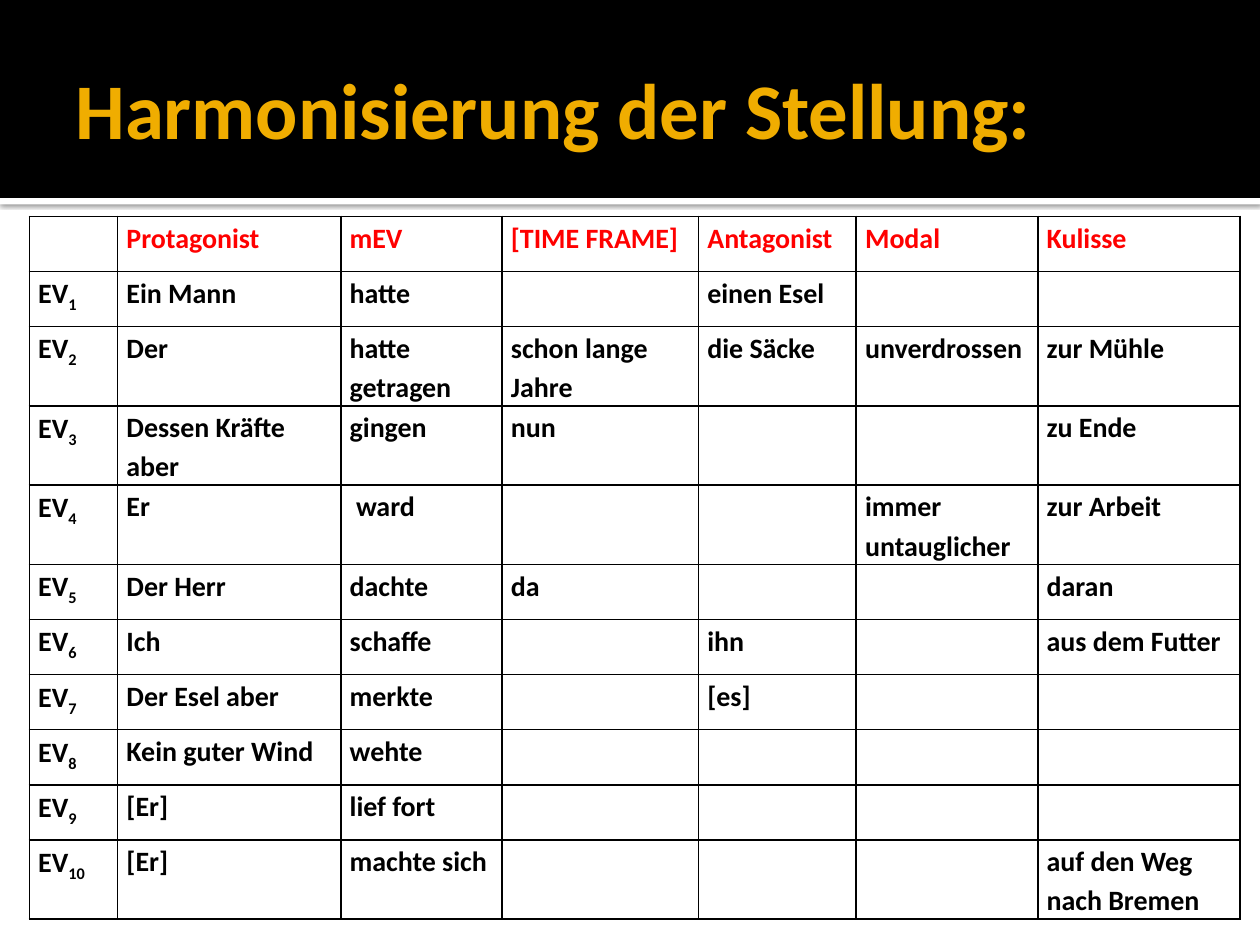
from dataclasses import dataclass

from lxml.etree import SubElement
from pptx import Presentation
from pptx.dml.color import RGBColor
from pptx.enum.shapes import MSO_SHAPE
from pptx.enum.text import MSO_ANCHOR, PP_ALIGN
from pptx.oxml import parse_xml
from pptx.oxml.ns import nsdecls, qn
from pptx.util import Cm, Pt


@dataclass(frozen=True)
class Theme:
    """Colours, font and type sizes of the slide."""

    font: str = "Calibri"
    white: str = "FFFFFF"
    black: str = "000000"
    gold: str = "F0AD00"
    red: str = "FF0000"
    title_size: int = 45
    table_size: int = 16


THEME = Theme()
HEADERS = ("Protagonist", "mEV", "[TIME FRAME]", "Antagonist", "Modal", "Kulisse")
EVENTS = (
    ("Ein Mann", "hatte", "", "einen Esel", "", ""),
    ("Der", "hatte getragen", "schon lange Jahre", "die Säcke", "unverdrossen", "zur Mühle"),
    ("Dessen Kräfte aber", "gingen", "nun", "", "", "zu Ende"),
    ("Er", " ward", "", "", "immer untauglicher", "zur Arbeit"),
    ("Der Herr", "dachte", "da", "", "", "daran"),
    ("Ich", "schaffe", "", "ihn", "", "aus dem Futter"),
    ("Der Esel aber", "merkte", "", "[es]", "", ""),
    ("Kein guter Wind", "wehte", "", "", "", ""),
    ("[Er]", "lief fort", "", "", "", ""),
    ("[Er]", "machte sich", "", "", "", "auf den Weg nach Bremen"),
)
COLUMN_WIDTHS = (1.78, 4.5, 3.25, 3.96, 3.18, 3.66, 4.08)
TWO_LINE_ROWS = {2, 3, 4, 10}
ROW_HEIGHT, TWO_LINE_HEIGHT = 1.11, 1.6


def apply_format(target, values):
    """Set each named attribute on the target."""
    for name, value in values.items():
        setattr(target, name, value)


def add_run(paragraph, text, size, color):
    """Add a bold run in the theme font and return it."""
    run = paragraph.add_run()
    run.text = text
    apply_format(run.font, {"name": THEME.font, "size": Pt(size), "bold": True})
    run.font.color.rgb = RGBColor.from_string(color)
    return run


def add_bar(slide, top, height, color):
    """Add a plain bar across the full slide width."""
    bar = slide.shapes.add_shape(MSO_SHAPE.RECTANGLE, 0, Cm(top), Cm(25.4), Cm(height))
    bar.shadow.inherit = False
    bar.fill.solid()
    bar.fill.fore_color.rgb = RGBColor.from_string(color)
    bar.line.fill.background()
    return bar


def add_bottom_shadow(shape):
    """Give the shape a soft shadow that falls straight down."""
    effects = shape._element.spPr.find(qn("a:effectLst"))
    shadow = SubElement(effects, qn("a:outerShdw"), blurRad=str(Pt(2.5)),
                        dist=str(Pt(0.8)), dir="5400000", algn="tl", rotWithShape="0")
    color = SubElement(shadow, qn("a:srgbClr"), val=THEME.black)
    SubElement(color, qn("a:alpha"), val="60000")


def place_title(slide, text):
    """Move the title placeholder over the bars and format it."""
    title = slide.shapes.title
    slide.shapes._spTree.append(title._element)
    apply_format(title, {"left": Cm(1.27), "top": Cm(0.43),
                         "width": Cm(22.86), "height": Cm(3.48)})
    apply_format(title.text_frame, {
        "vertical_anchor": MSO_ANCHOR.MIDDLE, "word_wrap": True,
        "margin_left": Cm(0.25), "margin_right": Cm(0.13),
        "margin_top": Cm(0.13), "margin_bottom": Cm(0.13)})
    paragraph = title.text_frame.paragraphs[0]
    paragraph.alignment = PP_ALIGN.LEFT
    add_run(paragraph, text, THEME.title_size, THEME.gold)


def add_borders(cell):
    """Draw a thin black line on all four sides of the cell."""
    properties = cell._tc.get_or_add_tcPr()
    for index, side in enumerate(("lnL", "lnR", "lnT", "lnB")):
        properties.insert(index, parse_xml(
            f'<a:{side} {nsdecls("a")} w="{Pt(1)}"><a:solidFill>'
            f'<a:srgbClr val="{THEME.black}"/></a:solidFill></a:{side}>'))


def fill_cell(cell, text, color, subscript=""):
    """Format a cell and write its text with an optional subscript."""
    apply_format(cell, {"margin_left": Cm(0.18), "margin_right": Cm(0.18),
                        "margin_top": 0, "margin_bottom": 0})
    cell.fill.background()
    add_borders(cell)
    paragraph = cell.text_frame.paragraphs[0]
    paragraph.line_spacing = 1.15
    if text:
        add_run(paragraph, text, THEME.table_size, color)
    if subscript:
        run = add_run(paragraph, subscript, THEME.table_size, color)
        run.font._element.set("baseline", "-25000")


def add_event_table(slide):
    """Add the table of events with numbered row labels."""
    heights = [TWO_LINE_HEIGHT if row in TWO_LINE_ROWS else ROW_HEIGHT
               for row in range(len(EVENTS) + 1)]
    table = slide.shapes.add_table(
        len(heights), len(COLUMN_WIDTHS), Cm(0.59), Cm(4.36),
        Cm(sum(COLUMN_WIDTHS)), Cm(sum(heights))).table
    apply_format(table, {"first_row": False, "horz_banding": False})
    for column, width in zip(table.columns, COLUMN_WIDTHS):
        column.width = Cm(width)
    for row, height in zip(table.rows, heights):
        row.height = Cm(height)
    for number, texts in enumerate((HEADERS, *EVENTS)):
        color = THEME.black if number else THEME.red
        label, subscript = ("EV", str(number)) if number else ("", "")
        fill_cell(table.cell(number, 0), label, color, subscript)
        for column, text in enumerate(texts, start=1):
            fill_cell(table.cell(number, column), text, color)


def main():
    """Build and save the slide."""
    presentation = Presentation()
    apply_format(presentation, {"slide_width": Cm(25.4), "slide_height": Cm(19.05)})
    slide = presentation.slides.add_slide(presentation.slide_layouts[5])
    add_bottom_shadow(add_bar(slide, 3.99, 0.13, THEME.white))
    add_bar(slide, 0, 3.99, THEME.black)
    place_title(slide, "Harmonisierung der Stellung:")
    add_event_table(slide)
    presentation.save("out.pptx")


if __name__ == "__main__":
    main()
